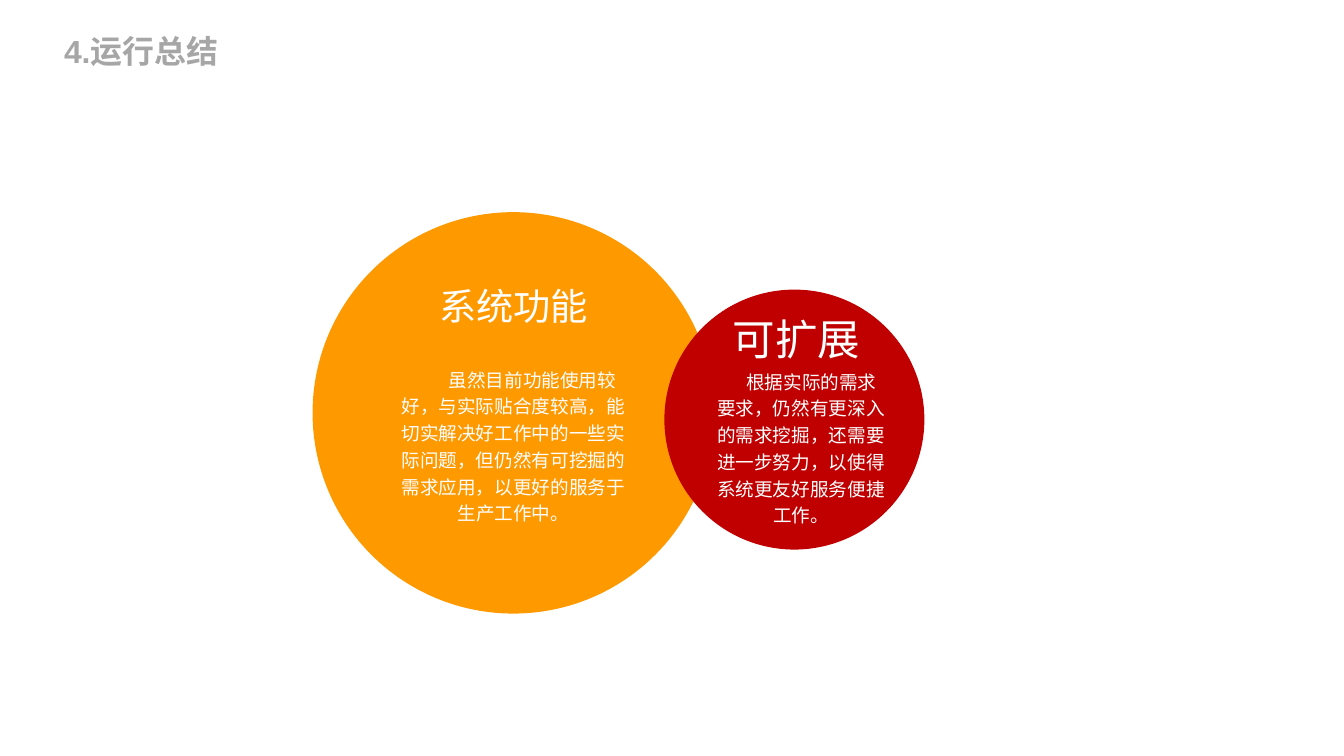
from dataclasses import dataclass

import pptx
import pptx.dml.color
import pptx.enum.shapes
import pptx.enum.text
import pptx.util

Inches = pptx.util.Inches
Align = pptx.enum.text.PP_ALIGN
Anchor = pptx.enum.text.MSO_ANCHOR
WHITE = "FFFFFF"


@dataclass
class Label:
    text: str
    left: float
    top: float
    width: float
    height: float
    size: int
    color: str = WHITE
    bold: bool = False
    wrap: bool = True
    indent: float = 0
    align: Align = Align.CENTER
    anchor: Anchor = Anchor.TOP
    line_spacing: float = 1.2


@dataclass
class Circle:
    left: float
    top: float
    diameter: float
    color: str
    heading: Label
    body: Label


TITLE = Label("4.运行总结", 0.67, 0.33, 5.45, 0.4, 24, color="A6A6A6", bold=True,
              align=Align.LEFT, anchor=Anchor.MIDDLE, line_spacing=1.0)

CIRCLES = [
    Circle(
        3.27, 2.22, 4.2, "FF9900",
        Label("系统功能", 4.59, 2.87, 1.57, 0.52, 28, wrap=False),
        Label("虽然目前功能使用较好，与实际贴合度较高，能切实解决好工作中的一些实际问题，"
              "但仍然有可挖掘的需求应用，以更好的服务于生产工作中。",
              4.13, 3.81, 2.48, 1.7, 14, indent=0.4),
    ),
    Circle(
        6.95, 3.03, 2.72, "C00000",
        Label("可扩展", 7.66, 3.17, 1.35, 0.65, 32, wrap=False),
        Label("根据实际的需求要求，仍然有更深入的需求挖掘，还需要进一步努力，"
              "以使得系统更友好服务便捷工作。",
              7.5, 3.83, 1.76, 1.7, 14, indent=0.22),
    ),
]


def rgb(color: str) -> pptx.dml.color.RGBColor:
    return pptx.dml.color.RGBColor.from_string(color)


def add_label(shapes, label: Label) -> None:
    sp = shapes.add_textbox(Inches(label.left), Inches(label.top),
                            Inches(label.width), Inches(label.height))
    tf = sp.text_frame
    tf.margin_left = tf.margin_top = tf.margin_right = tf.margin_bottom = 0
    tf.word_wrap = label.wrap
    tf.auto_size = pptx.enum.text.MSO_AUTO_SIZE.SHAPE_TO_FIT_TEXT
    tf.vertical_anchor = label.anchor
    p = tf.paragraphs[0]
    p.text = label.text
    p.alignment = label.align
    p.line_spacing = label.line_spacing
    p.font.name = "Arial"
    p.font.size = pptx.util.Pt(label.size)
    p.font.bold = label.bold
    p.font.color.rgb = rgb(label.color)
    if label.indent:
        # First-line indent, punctuation kept inside the box
        pPr = p._p.get_or_add_pPr()
        pPr.set("marL", "0")
        pPr.set("indent", str(Inches(label.indent)))
        pPr.set("hangingPunct", "0")


def add_circle(shapes, circle: Circle) -> None:
    sp = shapes.add_shape(pptx.enum.shapes.MSO_SHAPE.OVAL,
                          Inches(circle.left), Inches(circle.top),
                          Inches(circle.diameter), Inches(circle.diameter))
    sp.shadow.inherit = False
    sp.fill.solid()
    sp.fill.fore_color.rgb = rgb(circle.color)
    sp.line.fill.background()
    add_label(shapes, circle.heading)
    add_label(shapes, circle.body)


def main() -> None:
    prs = pptx.Presentation()
    prs.slide_width, prs.slide_height = Inches(14.06), Inches(7.91)
    s = prs.slides.add_slide(prs.slide_layouts[6])

    # Overlapping circles, back to front
    for circle in CIRCLES:
        add_circle(s.shapes, circle)

    # Slide title
    add_label(s.shapes, TITLE)

    prs.save("out.pptx")


if __name__ == "__main__":
    main()
